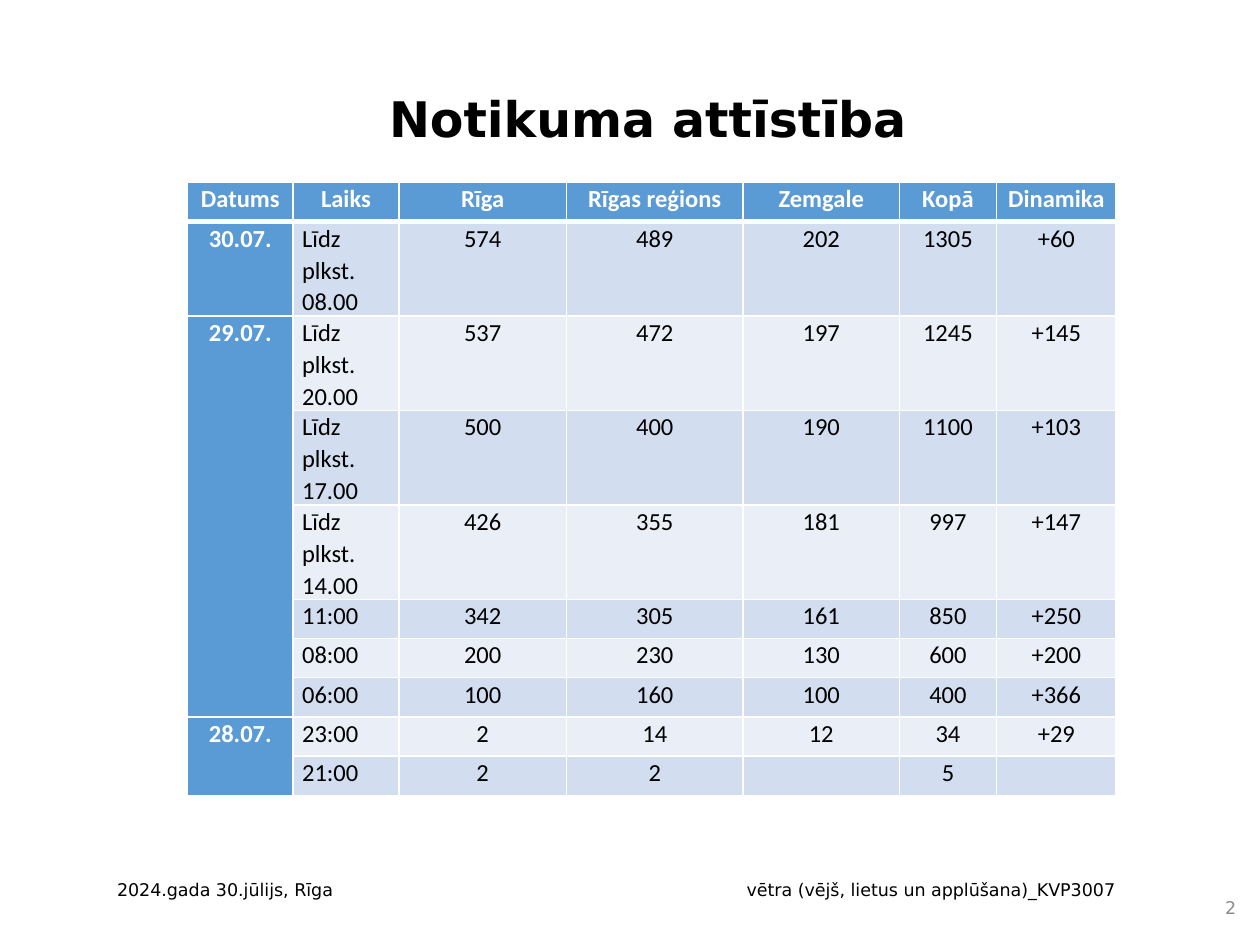
from lxml import etree
from pptx import Presentation
from pptx import util as u
from pptx.dml.color import RGBColor
from pptx.enum import text
from pptx.oxml import ns

SANS, BODY = "DejaVu Sans", "Calibri"
BLACK, WHITE, GREY = "000000", "FFFFFF", "8C8C8C"
BLUE, BANDS = "5B9BD5", ("D2DEEF", "EAEFF7")
LEFT, MID, RIGHT = text.PP_ALIGN.LEFT, text.PP_ALIGN.CENTER, text.PP_ALIGN.RIGHT

WIDTHS = (2.13, 2.13, 3.38, 3.56, 3.15, 1.96, 2.41)
TALL, SHORT = 1.6, 0.79
ROWS = (
    ("Datums", "Laiks", "Rīga", "Rīgas reģions", "Zemgale", "Kopā", "Dinamika"),
    ("30.07.", "Līdz plkst. 08.00", "574", "489", "202", "1305", "+60"),
    ("29.07.", "Līdz plkst. 20.00", "537", "472", "197", "1245", "+145"),
    ("", "Līdz plkst. 17.00", "500", "400", "190", "1100", "+103"),
    ("", "Līdz plkst. 14.00", "426", "355", "181", "997", "+147"),
    ("", "11:00", "342", "305", "161", "850", "+250"),
    ("", "08:00", "200", "230", "130", "600", "+200"),
    ("", "06:00", "100", "160", "100", "400", "+366"),
    ("28.07.", "23:00", "2", "14", "12", "34", "+29"),
    ("", "21:00", "2", "2", "", "5", ""),
)
SPANS = ((2, 7), (8, 9))  # first and last row of each merged date


def rgb(code):
    return RGBColor.from_string(code)


def style(para, face, size, code, align, bold=False, space=1.0):
    para.alignment = align
    para.line_spacing = space
    font = para.font
    font.name, font.size, font.bold = face, u.Pt(size), bold
    font.color.rgb = rgb(code)


def label(slide, words, left, top, width, height, anchor):
    """Add a wrapped text box and return its frame."""
    box = slide.shapes.add_textbox(u.Cm(left), u.Cm(top), u.Cm(width), u.Cm(height))
    frame = box.text_frame
    frame.word_wrap = True
    frame.vertical_anchor = anchor
    frame.text = words
    return frame


def add_tab(para, pos):
    """Put a right-aligned tab stop on a paragraph."""
    tabs = etree.SubElement(para._p.get_or_add_pPr(), ns.qn("a:tabLst"))
    etree.SubElement(tabs, ns.qn("a:tab"), pos=str(u.Cm(pos)), algn="r")


def edge(cell, side, width):
    props = cell._tc.get_or_add_tcPr()
    line = etree.SubElement(props, ns.qn("a:ln" + side), w=str(u.Pt(width)))
    fill = etree.SubElement(line, ns.qn("a:solidFill"))
    etree.SubElement(fill, ns.qn("a:srgbClr"), val=WHITE)


def fill_cell(cell, words, row, col):
    head = row == 0 or col == 0
    cell.margin_left = cell.margin_right = u.Cm(0.18)
    cell.margin_top = cell.margin_bottom = 0
    # Borders: a thick rule parts the header from the body
    for side in "LRTB":
        thick = (row, side) in ((0, "B"), (1, "T"))
        edge(cell, side, 3 if thick else 1)
    cell.fill.solid()
    cell.fill.fore_color.rgb = rgb(BLUE if head else BANDS[(row - 1) % 2])
    cell.text = words
    align = LEFT if col == 1 and row else MID
    style(cell.text_frame.paragraphs[0], BODY, 14, WHITE if head else BLACK,
          align, head, 1.07)


def add_grid(slide):
    high = [TALL if 1 <= row <= 4 else SHORT for row in range(len(ROWS))]
    frame = slide.shapes.add_table(len(ROWS), len(WIDTHS), u.Cm(3.78), u.Cm(3.68),
                                   u.Cm(sum(WIDTHS)), u.Cm(sum(high)))
    grid = frame.table
    grid.first_row = grid.horz_banding = False
    for col, width in zip(grid.columns, WIDTHS):
        col.width = u.Cm(width)
    for row, height in zip(grid.rows, high):
        row.height = u.Cm(height)
    for row, words in enumerate(ROWS):
        for col, word in enumerate(words):
            fill_cell(grid.cell(row, col), word, row, col)
    for first, last in SPANS:
        grid.cell(first, 0).merge(grid.cell(last, 0))


def main():
    deck = Presentation()
    deck.slide_width, deck.slide_height = u.Cm(25.4), u.Cm(19.05)
    slide = deck.slides.add_slide(deck.slide_layouts[6])
    middle, top = text.MSO_ANCHOR.MIDDLE, text.MSO_ANCHOR.TOP

    # Title, set slightly left of the box centre
    title = label(slide, "Notikuma attīstība", 6.35, 1.22, 14.1, 2.46, middle)
    title.margin_right = u.Cm(0.94)
    style(title.paragraphs[0], SANS, 28, BLACK, MID, True, 0.9)

    # Slide number
    number = label(slide, "2", 18.01, 17.96, 7.16, 0.69, middle)
    style(number.paragraphs[0], SANS, 10, GREY, RIGHT)

    # Footer: place and date on the left, event on the right
    foot = label(slide, "2024.gada 30.jūlijs, Rīga\t"
                 "vētra (vējš, lietus un applūšana)_KVP3007",
                 0.48, 17.65, 22.38, 0.74, top)
    foot.margin_left = u.Cm(1.88)
    add_tab(foot.paragraphs[0], 20.12)
    style(foot.paragraphs[0], SANS, 10, BLACK, LEFT, space=0.9)

    # Event counts by time and region
    add_grid(slide)
    deck.save("out.pptx")


if __name__ == "__main__":
    main()
